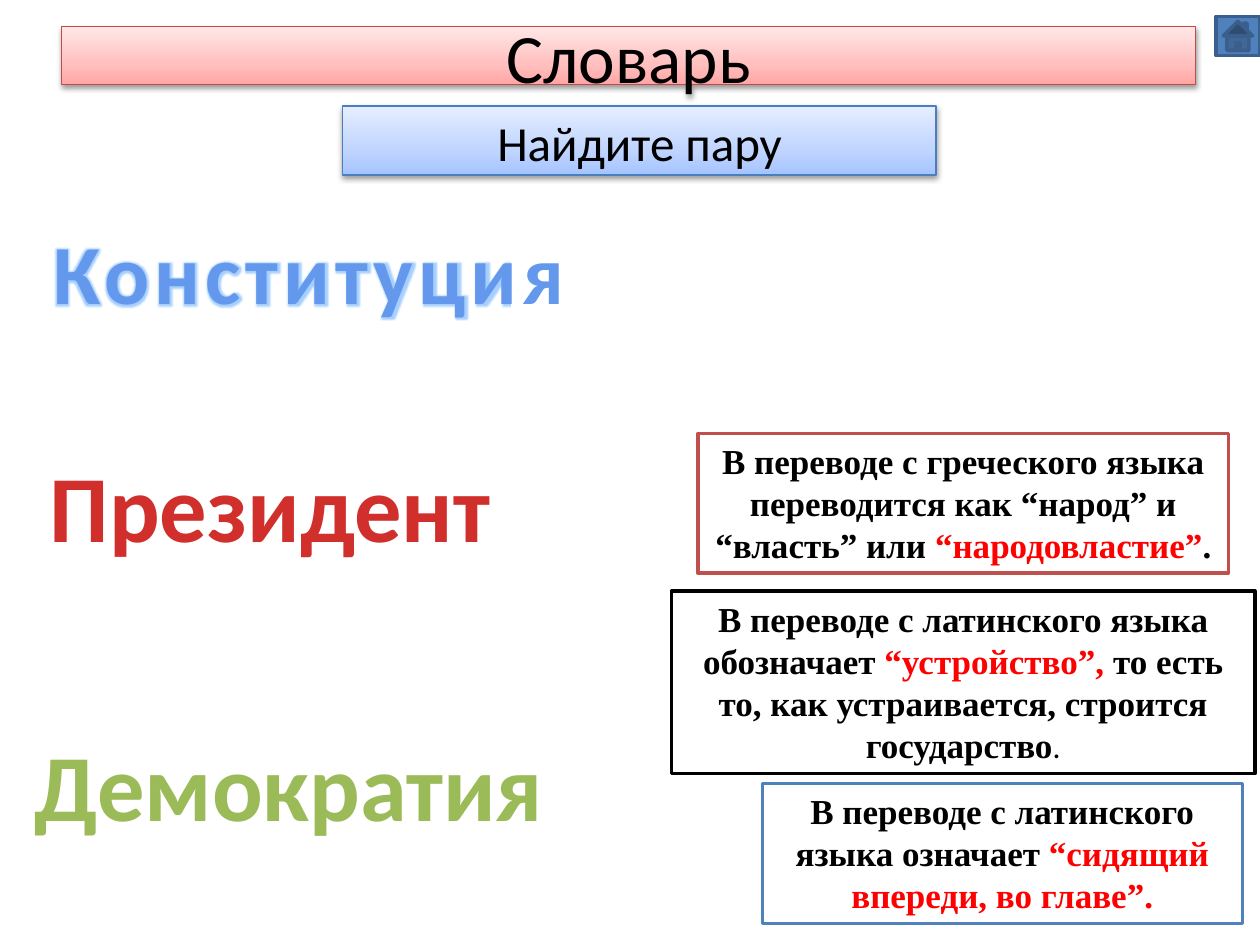
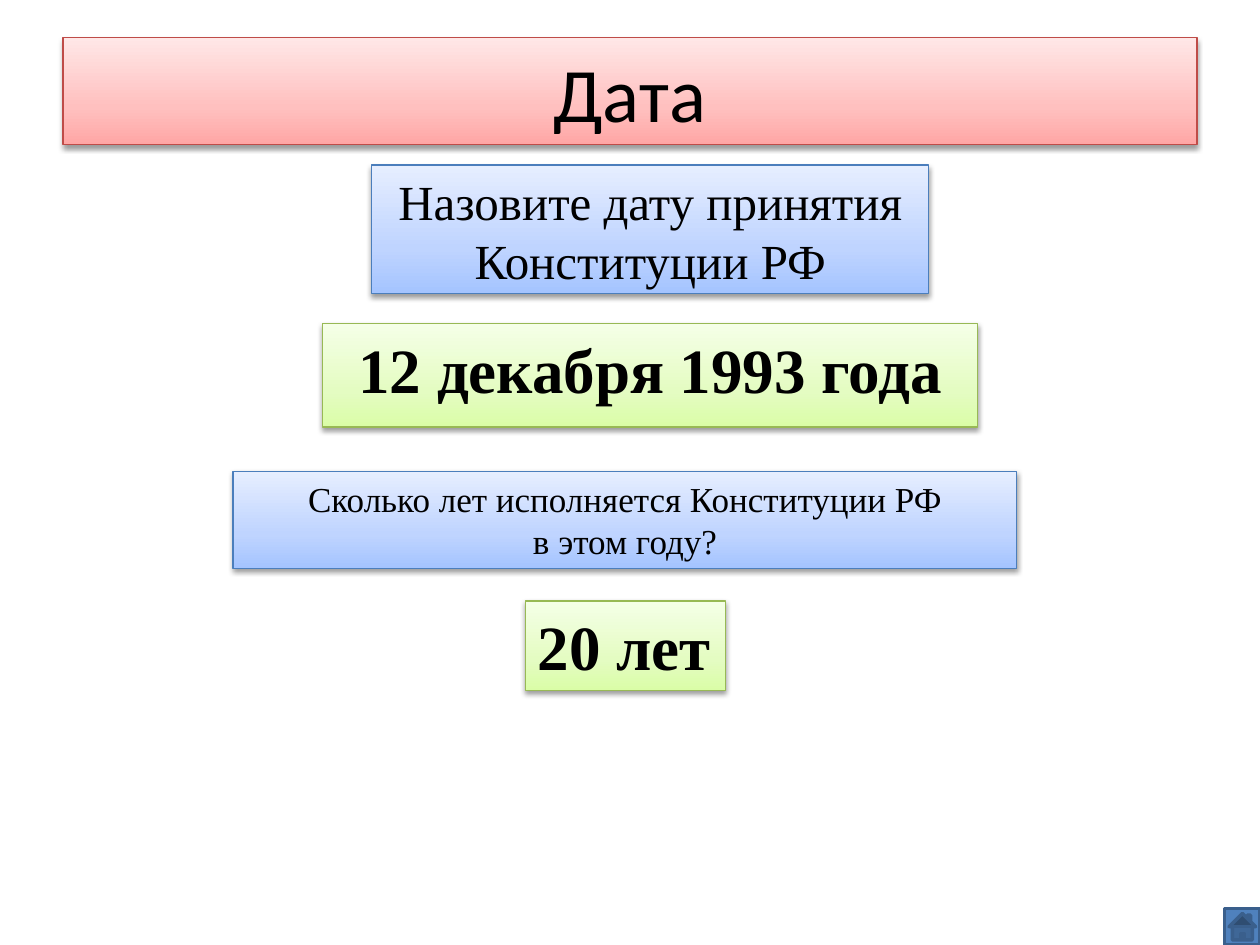
from dataclasses import dataclass, field
from typing import NamedTuple, Optional

from lxml import etree
from pptx import Presentation
from pptx import util as u
from pptx.dml.color import RGBColor
from pptx.enum import shapes, text
from pptx.oxml import ns

COLUMNS, ROWS = 100, 75
SLIDE_WIDTH, SLIDE_HEIGHT = u.Inches(10), u.Inches(7.5)

Stops = tuple[tuple[int, str], ...]


class Area(NamedTuple):
    column: float
    row: float
    columns: float
    rows: float

    def lengths(self) -> tuple[int, int, int, int]:
        across, down = SLIDE_WIDTH / COLUMNS, SLIDE_HEIGHT / ROWS
        return (round(self.column * across), round(self.row * down),
                round(self.columns * across), round(self.rows * down))


class Tone(NamedTuple):
    line: str
    stops: Stops


@dataclass(frozen=True)
class Theme:
    heading: str = "Calibri"
    reading: str = "Times New Roman"
    ink: str = "000000"
    paper: str = "FFFFFF"
    accent: str = "FF0000"
    blue: str = "4F81BD"
    red: str = "C0504D"
    green: str = "9BBB59"
    button_line: str = "3A5F8C"
    glow: str = "A6D0FF"
    title_tone: Tone = Tone("BF4C48", ((0, "FFA6A5"), (35, "FFC0BF"), (100, "FFE7E7")))
    question_tone: Tone = Tone("4B7EBC", ((0, "A4C4FF"), (35, "BFD4FF"), (100, "E6EEFF")))
    answer_tone: Tone = Tone("98B955", ((0, "DAFDA7"), (35, "E4FCC2"), (100, "F5FFE7")))
    constitution: Stops = ((10, "6398ED"), (75, "265EA0"))
    president: Stops = ((0, "FC7C7A"), (75, "D02F2C"), (100, "C70500"))
    title_size: float = 44
    tight_title_size: float = 39.6
    question_size: float = 28
    answer_size: float = 36
    note_size: float = 20
    stop_size: float = 18
    term_size: float = 54
    long_term_size: float = 48
    band_line: float = 0.75
    frame_line: float = 2


THEME = Theme()


@dataclass(frozen=True)
class Words:
    content: str
    size: float = THEME.note_size
    font: str = THEME.reading
    color: str = THEME.ink
    bold: bool = False
    stops: Stops = ()
    outline: Optional[tuple[str, float]] = None
    spacing: float = 0
    glow: float = 0


Lines = list[list[Words]]


@dataclass(frozen=True)
class Band:
    area: Area
    tone: Tone
    lines: Lines
    middle: bool = False
    grow: bool = False
    wrap: bool = True
    align: text.PP_ALIGN = text.PP_ALIGN.CENTER


@dataclass(frozen=True)
class Term:
    area: Area
    words: Words


@dataclass(frozen=True)
class Definition:
    area: Area
    line: str
    words: list[Words]


@dataclass(frozen=True)
class Page:
    home: Area
    bands: list[Band]
    terms: list[Term] = field(default_factory=list)
    definitions: list[Definition] = field(default_factory=list)


def add_color(parent, color: str, alpha: int = 100) -> None:
    value = etree.SubElement(parent, ns.qn("a:srgbClr"), val=color)
    if alpha < 100:
        etree.SubElement(value, ns.qn("a:alpha"), val=str(alpha * 1000))


def set_gradient(fill, owner, stops: Stops, angle: int) -> None:
    fill.gradient()
    fill.gradient_angle = angle
    stop_list = owner.find(ns.qn("a:gradFill")).find(ns.qn("a:gsLst"))
    stop_list.clear()
    for position, color in stops:
        add_color(etree.SubElement(stop_list, ns.qn("a:gs"), pos=str(position * 1000)), color)


def add_words(paragraph, words: Words) -> None:
    run = paragraph.add_run()
    run.text = words.content
    font = run.font
    font.size, font.bold = u.Pt(words.size), words.bold
    properties = run._r.get_or_add_rPr()
    if words.stops:
        set_gradient(font.fill, properties, words.stops, 270)
    else:
        font.color.rgb = RGBColor.from_string(words.color)
    if words.spacing:
        properties.set("spc", str(round(words.spacing * 100)))
    if words.outline:
        color, width = words.outline
        outline = etree.Element(ns.qn("a:ln"), w=str(u.Pt(width)))
        add_color(etree.SubElement(outline, ns.qn("a:solidFill")), color)
        properties.insert(0, outline)
    if words.glow:
        effects = etree.SubElement(properties, ns.qn("a:effectLst"))
        add_color(etree.SubElement(effects, ns.qn("a:glow"), rad=str(u.Pt(words.glow))), THEME.glow)
    font.name = words.font


def write(shape, lines: Lines, wrap: bool = True, grow: bool = False, middle: bool = False,
          align: text.PP_ALIGN = text.PP_ALIGN.CENTER) -> None:
    frame = shape.text_frame
    frame.word_wrap = wrap
    frame.auto_size = text.MSO_AUTO_SIZE.SHAPE_TO_FIT_TEXT if grow else text.MSO_AUTO_SIZE.NONE
    frame.vertical_anchor = text.MSO_ANCHOR.MIDDLE if middle else text.MSO_ANCHOR.TOP
    for index, line in enumerate(lines):
        paragraph = frame.add_paragraph() if index else frame.paragraphs[0]
        paragraph.alignment = align
        for words in line:
            add_words(paragraph, words)


def add_block(slide, kind: shapes.MSO_SHAPE, area: Area, line: str, width: float):
    block = slide.shapes.add_shape(kind, *area.lengths())
    block.shadow.inherit = False
    block.line.color.rgb = RGBColor.from_string(line)
    block.line.width = u.Pt(width)
    return block


def draw_band(slide, band: Band) -> None:
    block = add_block(slide, shapes.MSO_SHAPE.RECTANGLE, band.area, band.tone.line, THEME.band_line)
    properties = block.element.spPr
    set_gradient(block.fill, properties, band.tone.stops, 90)
    shadow = etree.SubElement(properties.find(ns.qn("a:effectLst")), ns.qn("a:outerShdw"),
                              blurRad=str(u.Pt(3.1)), dist=str(u.Pt(1.6)),
                              dir="5400000", rotWithShape="0")
    add_color(shadow, THEME.ink, 38)
    write(block, band.lines, band.wrap, band.grow, band.middle, band.align)


def draw_term(slide, term: Term) -> None:
    box = slide.shapes.add_textbox(*term.area.lengths())
    write(box, [[term.words]], wrap=False, grow=True)


def draw_solid(slide, kind: shapes.MSO_SHAPE, area: Area, line: str, fill: str):
    block = add_block(slide, kind, area, line, THEME.frame_line)
    block.fill.solid()
    block.fill.fore_color.rgb = RGBColor.from_string(fill)
    return block


def draw_definition(slide, definition: Definition) -> None:
    frame = draw_solid(slide, shapes.MSO_SHAPE.RECTANGLE, definition.area,
                       definition.line, THEME.paper)
    write(frame, [definition.words], grow=True)


def draw_page(slide, page: Page) -> None:
    for band in page.bands:
        draw_band(slide, band)
    for term in page.terms:
        draw_term(slide, term)
    for definition in page.definitions:
        draw_definition(slide, definition)
    draw_solid(slide, shapes.MSO_SHAPE.ACTION_BUTTON_HOME, page.home, THEME.button_line, THEME.blue)


def title(area: Area, content: str, size: float) -> Band:
    return Band(area, THEME.title_tone, [[Words(content, size, THEME.heading)]], middle=True)


def strong(content: str, color: str = THEME.ink) -> Words:
    return Words(content, color=color, bold=True)


def term_words(content: str, size: float = THEME.term_size, **looks) -> Words:
    return Words(content, size, THEME.heading, bold=True, **looks)


VOCABULARY = Page(
    home=Area(96.5, 1.3, 3.5, 3.1),
    bands=[
        title(Area(4.9, 2.1, 90, 4.6), "Словарь", THEME.tight_title_size),
        Band(Area(27.2, 8.4, 47.1, 5.5), THEME.question_tone,
             [[Words("Найдите пару", THEME.question_size, THEME.heading)]]),
    ],
    terms=[
        Term(Area(2.8, 17, 43.5, 9.1),
             term_words("Конституция", THEME.long_term_size, stops=THEME.constitution,
                        outline=("F4F6F9", 0.9), spacing=3, glow=3.5)),
        Term(Area(2.8, 35.1, 37.3, 10.1), term_words("Президент", stops=THEME.president)),
        Term(Area(1.6, 57.2, 42.7, 10.1),
             term_words("Демократия", color=THEME.green, outline=("FEFEFE", 1.5))),
    ],
    definitions=[
        Definition(Area(60.5, 62.2, 38.1, 11.1), THEME.blue, [
            strong("В переводе с латинского языка означает "),
            strong("“сидящий впереди, во главе”.", THEME.accent)]),
        Definition(Area(55.4, 34.4, 42.1, 11.1), THEME.red, [
            strong("В переводе с греческого языка переводится как “народ” и “власть” или "),
            strong("“народовластие”", THEME.accent),
            strong(".")]),
        Definition(Area(53.3, 46.9, 46.3, 14.5), THEME.ink, [
            strong("В переводе с латинского языка обозначает "),
            strong("“устройство”, ", THEME.accent),
            strong("то есть то, как устраивается, строится государство"),
            Words(".", THEME.stop_size, THEME.heading)]),
    ],
)

DATE = Page(
    home=Area(97.2, 72.1, 2.8, 2.9),
    bands=[
        title(Area(5, 3, 90, 8.5), "Дата", THEME.title_size),
        Band(Area(29.5, 13.1, 44.2, 10.2), THEME.question_tone,
             [[Words("Назовите дату принятия Конституции РФ", THEME.question_size)]]),
        Band(Area(25.6, 25.7, 52, 8.2), THEME.answer_tone,
             [[Words("12 декабря 1993 года", THEME.answer_size, bold=True)]]),
        Band(Area(18.5, 37.4, 62.2, 7.7), THEME.question_tone,
             [[Words("Сколько лет исполняется Конституции РФ")], [Words("в этом году?")]], grow=True),
        Band(Area(41.7, 47.7, 15.9, 7.1), THEME.answer_tone,
             [[Words("20 лет", THEME.answer_size, bold=True)]],
             grow=True, wrap=False, align=text.PP_ALIGN.LEFT),
    ],
)


def main() -> None:
    deck = Presentation()
    deck.slide_width, deck.slide_height = SLIDE_WIDTH, SLIDE_HEIGHT
    for page in (VOCABULARY, DATE):
        draw_page(deck.slides.add_slide(deck.slide_layouts[6]), page)
    deck.save("out.pptx")


if __name__ == "__main__":
    main()
